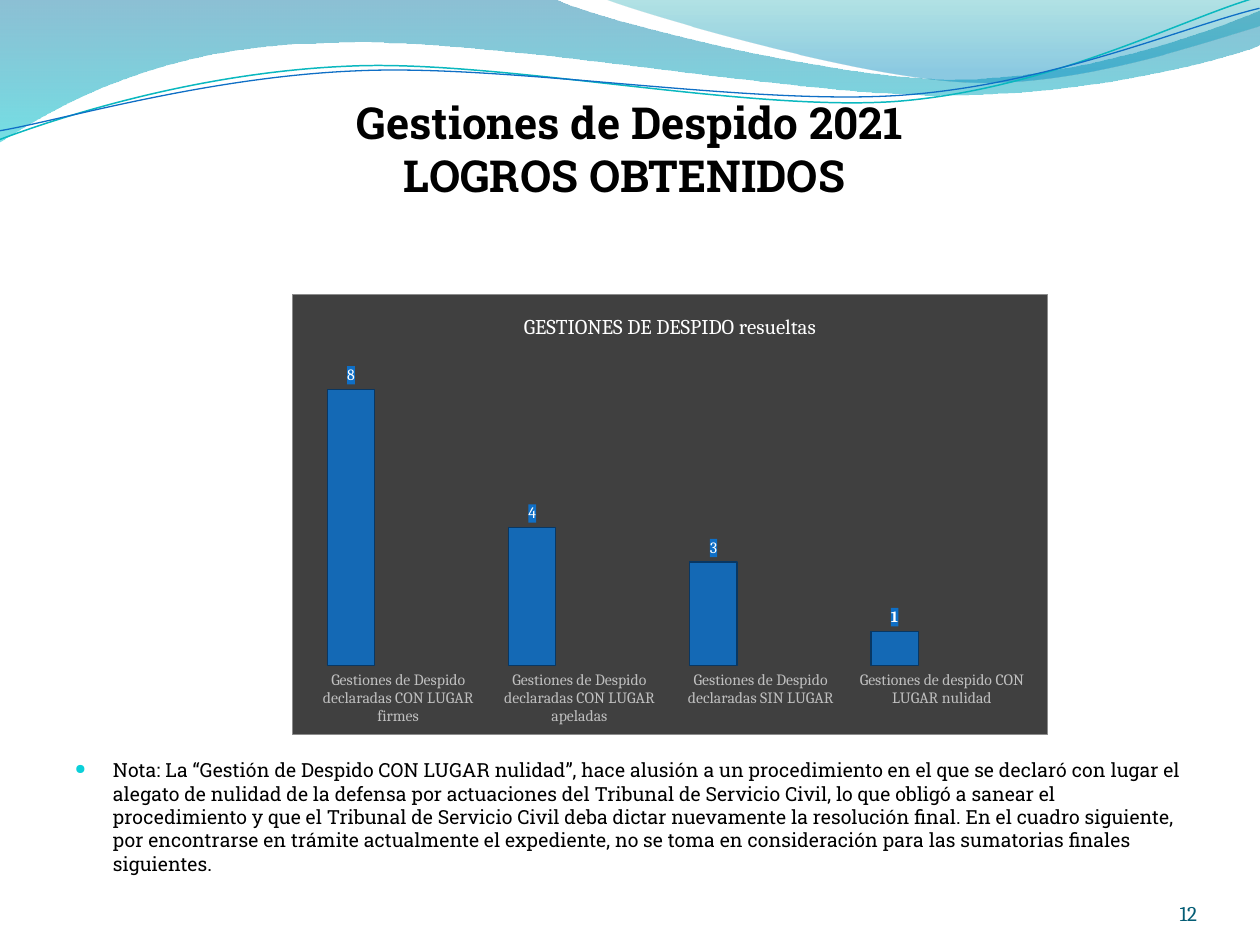
import math

import pptx
import pptx.util
import pptx.dml.color
import pptx.chart.data
import pptx.enum.chart
import pptx.enum.text
from lxml import etree
from pptx.oxml.ns import qn

PX = 914400 / 126
Pt = pptx.util.Pt
ALIGN = pptx.enum.text.PP_ALIGN
ANCHOR = pptx.enum.text.MSO_ANCHOR
CHART = pptx.enum.chart


def emu(px):
    return round(px * PX)


def rgb(code):
    return pptx.dml.color.RGBColor.from_string(code)


def fade(fill, share):
    """Set the opacity in percent of each plain colour under an element."""
    for tag in fill.iter(qn("a:srgbClr")):
        etree.SubElement(tag, qn("a:alpha"), val=str(share * 1000))


def turn(points, center, angle):
    """Turn points clockwise by degrees about a center."""
    cos, sin = math.cos(math.radians(angle)), math.sin(math.radians(angle))
    x0, y0 = center
    return [(x0 + (x - x0) * cos - (y - y0) * sin,
             y0 + (x - x0) * sin + (y - y0) * cos) for x, y in points]


class Deck:
    slab = "Roboto Slab"
    serif = "Cambria"

    def __init__(self, wide, high):
        self.file = pptx.Presentation()
        self.file.slide_width = emu(wide)
        self.file.slide_height = emu(high)
        self.slide = self.file.slides.add_slide(self.file.slide_layouts[6])

    def style(self, font, size, color, face, bold=False):
        font.size, font.name, font.bold = Pt(size), face, bold
        font.color.rgb = rgb(color)

    def trace(self, points, bends, close):
        """Draw an outline; each index in bends starts handle, handle, end."""
        pen = self.slide.shapes.build_freeform(*points[0], scale=PX)
        pen.add_line_segments(points[1:], close=close)
        shape = pen.convert_to_shape()
        shape.shadow.inherit = False
        legs = list(shape._element.spPr.iter(qn("a:lnTo")))
        for i in bends:
            bend = etree.Element(qn("a:cubicBezTo"))
            legs[i - 1].addprevious(bend)
            for leg in legs[i - 1:i + 2]:
                bend.append(leg[0])
                leg.getparent().remove(leg)
        return shape

    def wave(self, points, bends, stops):
        shape = self.trace(points, bends, True)
        shape.line.fill.background()
        shape.fill.gradient()
        shape.fill.gradient_angle = 270
        tags = shape._element.spPr.iter(qn("a:gs"))
        for stop, tag, (place, color, share) in zip(
                shape.fill.gradient_stops, tags, stops):
            stop.position = place
            stop.color.rgb = rgb(color)
            fade(tag, share)

    def line(self, points, center, color, width):
        tilt = -2.7
        flat = turn(points, center, -tilt)
        shape = self.trace(flat, range(1, len(points), 3), False)
        shape.rotation = tilt
        shape.fill.background()
        shape.line.color.rgb = rgb(color)
        shape.line.width = Pt(width)

    def text(self, box, words, size, color, face, align=ALIGN.LEFT, bold=False,
             pitch=None, inset=(0, 0), anchor=ANCHOR.TOP):
        frame = self.slide.shapes.add_textbox(*map(emu, box)).text_frame
        frame.word_wrap = True
        frame.vertical_anchor = anchor
        frame.margin_left = frame.margin_right = emu(inset[0])
        frame.margin_top = frame.margin_bottom = emu(inset[1])
        frame.text = words
        para = frame.paragraphs[0]
        para.alignment = align
        if pitch:
            para.line_spacing = Pt(pitch)
        for run in para.runs:
            self.style(run.font, size, color, face, bold)
        return para

    def bullet(self, para, color, indent):
        props = para._p.get_or_add_pPr()
        props.set("marL", str(emu(indent)))
        props.set("indent", str(-emu(indent)))
        tint = etree.SubElement(props, qn("a:buClr"))
        etree.SubElement(tint, qn("a:srgbClr"), val=color)
        etree.SubElement(props, qn("a:buSzPct"), val="72000")
        etree.SubElement(props, qn("a:buChar"), char="●")

    def paint(self, parent, before, fill, line=None):
        """Give a chart part a fill and a line, ahead of a named child."""
        props = etree.Element(qn("c:spPr"))
        solid = etree.SubElement(props, qn("a:solidFill"))
        etree.SubElement(solid, qn("a:srgbClr"), val=fill)
        if line:
            edge = etree.SubElement(props, qn("a:ln"), w=str(Pt(0.5)))
            solid = etree.SubElement(edge, qn("a:solidFill"))
            etree.SubElement(solid, qn("a:srgbClr"), val=line)
        parent.find(qn(before)).addprevious(props)

    def chart(self, box, title, names, rows, colors):
        data = pptx.chart.data.ChartData()
        data.categories = names
        for i, row in enumerate(rows, 1):
            data.add_series(f"Series {i}", row)
        chart = self.slide.shapes.add_chart(
            CHART.XL_CHART_TYPE.COLUMN_CLUSTERED, *map(emu, box), data).chart
        self.style(chart.font, 10, "000000", self.serif)
        self.paint(chart._chartSpace, "c:txPr", "404040", "8C8C8C")
        chart.has_legend = False
        chart.has_title = True
        chart.chart_title.text_frame.text = title
        run = chart.chart_title.text_frame.paragraphs[0].runs[0]
        self.style(run.font, 12, "FFFFFF", self.serif)

        # Axes
        value, base = chart.value_axis, chart.category_axis
        value.visible = value.has_major_gridlines = False
        value.minimum_scale, value.maximum_scale = 0, 9
        base.major_tick_mark = CHART.XL_TICK_MARK.NONE
        base.format.line.fill.background()
        self.style(base.tick_labels.font, 9, "BFBFBF", self.serif)

        # Columns and their labels
        plot = chart.plots[0]
        plot.gap_width, plot.overlap = 84, 0
        plot.vary_by_categories = False
        for series, (fill, edge) in zip(plot.series, colors):
            series.format.fill.solid()
            series.format.fill.fore_color.rgb = rgb(fill)
            fade(series._element.spPr, 88)
            series.format.line.color.rgb = rgb(edge)
            series.format.line.width = Pt(0.75)
            labels = series.data_labels
            labels.show_value = True
            labels.position = CHART.XL_LABEL_POSITION.OUTSIDE_END
            self.style(labels.font, 9, "FFFFFF", self.serif, True)
            self.paint(labels._element, "c:txPr", fill)
        main = plot.series[0]
        for i in range(3):
            label = main.points[i].data_label
            self.style(label.font, 9, "FFFFFF", self.serif)
            label.position = CHART.XL_LABEL_POSITION.OUTSIDE_END
        for tag in main.data_labels._element.findall(qn("c:dLbl")):
            self.paint(tag, "c:txPr", colors[0][0])


def main():
    deck = Deck(1260, 945)

    # Waves across the top
    deck.wave([(0, 0), (554, -1), (600, 21), (837, 79), (955, 79),
               (1075, 79), (1207, 33), (1260, 11), (1261, 45),
               (1239, 55), (1096, 96), (940, 95),
               (784, 95), (481, 35), (324, 43),
               (163, 45), (58, 105), (-1, 142)], (2, 5, 9, 12, 15),
              [(0, "0074A1", 45), (1, "00C6CF", 55)])
    deck.wave([(604, -1), (641, 14), (859, 78), (969, 82),
               (1079, 87), (1211, 40), (1260, 26), (1260, 0)], (1, 4),
              [(0, "00A1A9", 30), (0.8, "008BBF", 45)])
    deck.line([(0, 140), (60, 117), (199, 72), (349, 66),
               (498, 59), (747, 112), (898, 101),
               (1050, 89), (1182, 19), (1257, -3)],
              (629, 72), "0AB8BF", 0.85)
    deck.line([(0, 131), (59, 121), (207, 77), (357, 71),
               (508, 64), (752, 106), (903, 95),
               (1053, 84), (1186, 26), (1260, 8)],
              (629, 74), "0F6FC6", 0.75)

    # Title
    deck.text((63, 95, 1134, 157),
              "Gestiones de Despido 2021\vLOGROS OBTENIDOS ",
              25.2, "000000", deck.slab, ALIGN.CENTER, True, 30.3)

    # Note
    note = deck.text(
        (63, 752, 1134, 120),
        "Nota: La “Gestión de Despido CON LUGAR nulidad”, hace alusión a un "
        "procedimiento en el que se declaró con lugar el alegato de nulidad de "
        "la defensa por actuaciones del Tribunal de Servicio Civil, lo que "
        "obligó a sanear el procedimiento y que el Tribunal de Servicio Civil "
        "deba dictar nuevamente la resolución final. En el cuadro siguiente, "
        "por encontrarse en trámite actualmente el expediente, no se toma en "
        "consideración para las sumatorias finales siguientes.",
        11.1, "000000", deck.slab, pitch=13.4, inset=(12, 6))
    deck.bullet(note, "0BD0D9", 38)

    # Page number
    deck.text((1092, 876, 105, 50), "12", 12, "045D75", deck.serif,
              ALIGN.RIGHT, anchor=ANCHOR.BOTTOM)

    # Chart
    deck.chart((292, 294, 756, 441), "GESTIONES DE DESPIDO resueltas",
               ["Gestiones de Despido declaradas CON LUGAR firmes",
                "Gestiones de Despido declaradas CON LUGAR apeladas",
                "Gestiones de Despido declaradas SIN LUGAR",
                "Gestiones de despido CON LUGAR nulidad"],
               [[8, 4, 3, 1], [None] * 4, [None] * 4],
               [("0F6FC6", "083763"), ("009DD9", "004E6C"),
                ("0BD0D9", "06686C")])

    deck.file.save("out.pptx")


if __name__ == "__main__":
    main()
